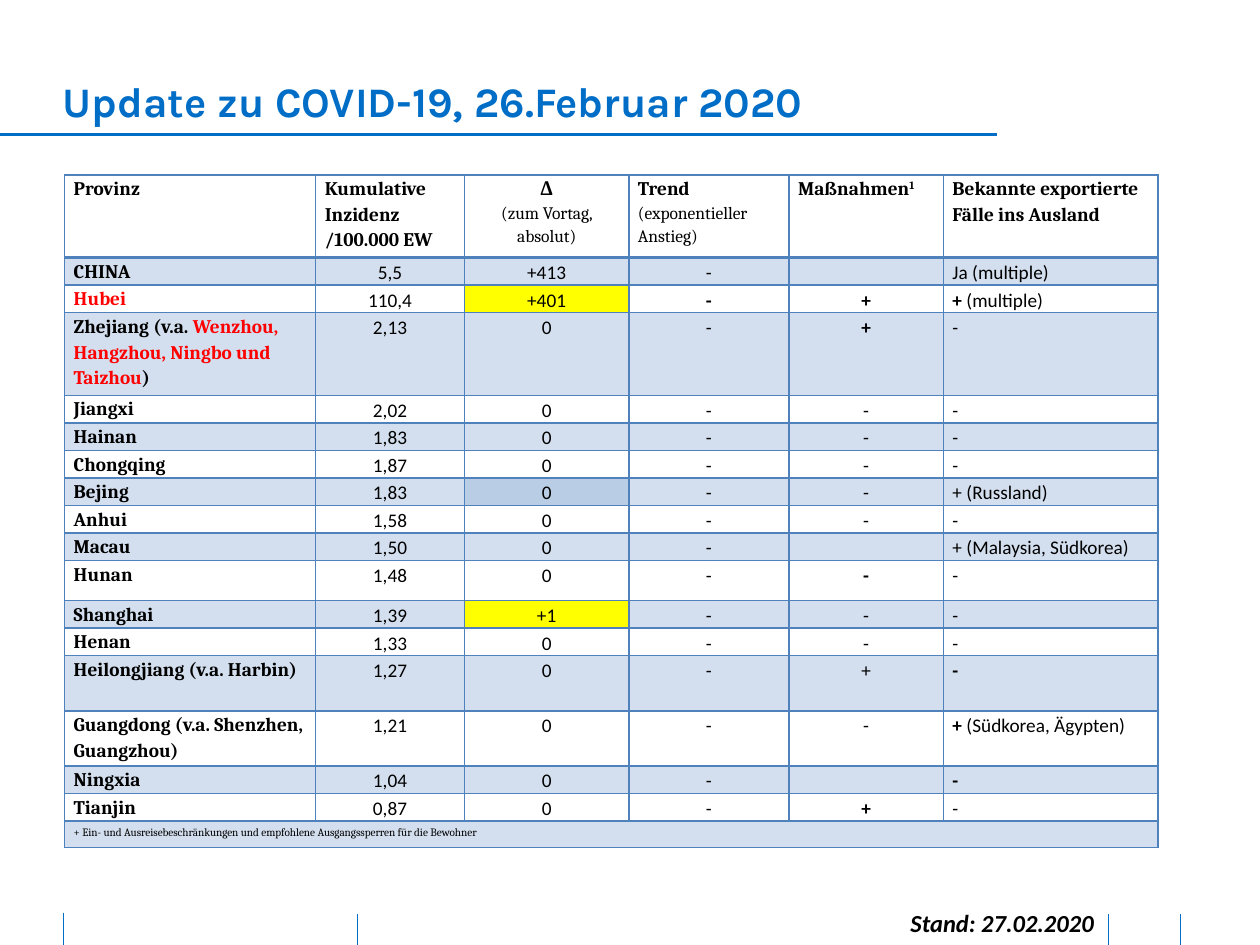
from lxml.etree import SubElement
from pptx import Presentation
from pptx.dml.color import RGBColor
from pptx.enum.shapes import MSO_CONNECTOR as Conn
from pptx.enum.text import PP_ALIGN as Align
from pptx.oxml.ns import qn
from pptx.util import Pt

BLUE = RGBColor(0x00, 0x6E, 0xC7)
BLACK = RGBColor(0x00, 0x00, 0x00)
RED = RGBColor(0xFF, 0x00, 0x00)
BAND = RGBColor(0xD3, 0xDF, 0xEE)
MID = RGBColor(0xB9, 0xCD, 0xE5)
YELLOW = RGBColor(0xFF, 0xFF, 0x00)
EDGE = RGBColor(0x4F, 0x81, 0xBD)

# Content: a cell is a string, or a list of paragraphs made of (text, format) runs
BOLD = dict(bold=True)
SMALL = dict(bold=False, size=10)
RAISED = dict(raised=True)
PLUS = [[("+", BOLD)]]
MINUS = [[("-", BOLD)]]

HEAD = [
    "Provinz",
    "Kumulative Inzidenz /100.000 EW",
    [[("Δ", {})], [("(zum Vortag, absolut)", SMALL)]],
    [[("Trend", {})], [("(exponentieller Anstieg)", SMALL)]],
    [[("Maßnahmen", {}), ("1", RAISED)]],
    "Bekannte exportierte Fälle ins Ausland",
]
ZHEJIANG = [[("Zhejiang (v.a. ", {}),
             ("Wenzhou, Hangzhou, Ningbo und Taizhou", dict(color=RED)),
             (")", {})]]
ROWS = [
    ["CHINA", "5,5", "+413", "-", "", "Ja (multiple)"],
    [[[("Hubei", dict(color=RED))]], "110,4", "+401", MINUS, PLUS,
     [[("+", BOLD), (" (multiple)", {})]]],
    [ZHEJIANG, "2,13", "0", "-", PLUS, "-"],
    ["Jiangxi", "2,02", "0", "-", "-", "-"],
    ["Hainan", "1,83", "0", "-", "-", "-"],
    ["Chongqing", "1,87", "0", "-", "-", "-"],
    ["Bejing", "1,83", "0", "-", "-", "+ (Russland)"],
    ["Anhui", "1,58", "0", "-", "-", "-"],
    ["Macau", "1,50", "0", "-", "", "+ (Malaysia, Südkorea)"],
    ["Hunan", "1,48", "0", "-", MINUS, "-"],
    ["Shanghai", "1,39", "+1", "-", "-", "-"],
    ["Henan", "1,33", "0", "-", "-", "-"],
    ["Heilongjiang (v.a. Harbin)", "1,27", "0", "-", "+", MINUS],
    ["Guangdong (v.a. Shenzhen, Guangzhou)", "1,21", "0", "-", "-",
     [[("+", BOLD), (" (Südkorea, Ägypten)", {})]]],
    ["Ningxia", "1,04", "0", "-", "", MINUS],
    ["Tianjin", "0,87", "0", "-", PLUS, "-"],
]
NOTE = [[("+ Ein- und Ausreisebeschränkungen und empfohlene "
          "Ausgangssperren für die Bewohner", RAISED)]]
GRID = [HEAD] + ROWS + [[NOTE] + [""] * 5]

WIDTHS = [143.5, 85, 94, 91.5, 88.25, 122.5]
LOW = 15.75
TALL = {0: 47.2, 3: 47.2, 10: 23, 13: 2 * LOW, 14: 2 * LOW, 17: 15.2}
MARKS = {(2, 2): YELLOW, (7, 2): MID, (11, 2): YELLOW}

# x1, y1, x2, y2, width
LINES = [
    (204.5, 522, 204.5, 540, 0.5),
    (36, 521.5, 36, 540, 0.5),
    (674.64, 522.5, 674.64, 540, 0.5),
    (633.6, 522.5, 633.6, 540, 0.5),
    (0, 77, 569.5, 77, 1.5),
]

deck = Presentation()
deck.slide_width, deck.slide_height = Pt(720), Pt(540)
slide = deck.slides.add_slide(deck.slide_layouts[6])


def write(frame, text, size=11, font="Calibri", color=BLACK, bold=False,
          italic=False, align=Align.LEFT, space=None):
    """Fill a text frame with a string or with paragraphs of runs."""
    frame.word_wrap = True
    paras = [[(text, {})]] if isinstance(text, str) else text
    for i, runs in enumerate(paras):
        para = frame.add_paragraph() if i else frame.paragraphs[0]
        para.alignment = align
        if space:
            para.line_spacing = space
        for part, own in runs:
            if not part:  # keep empty cells as low as the text rows
                para._p.get_or_add_endParaRPr().set("sz", str(size * 100))
                continue
            run = para.add_run()
            run.text = part
            face = run.font
            face.name = font
            face.size = Pt(own.get("size", size))
            face.bold = own.get("bold", bold)
            face.italic = italic
            face.color.rgb = own.get("color", color)
            if own.get("raised"):
                face._element.set("baseline", "30000")


def border(cell, **widths):
    props = cell._tc.get_or_add_tcPr()
    for side in "LRTB":
        line = SubElement(props, qn("a:ln" + side),
                          w=str(Pt(widths.get(side, 1))))
        fill = SubElement(line, qn("a:solidFill"))
        SubElement(fill, qn("a:srgbClr"), val=str(EDGE))


# Rules of the page
for x1, y1, x2, y2, width in LINES:
    rule = slide.shapes.add_connector(Conn.STRAIGHT, Pt(x1), Pt(y1),
                                      Pt(x2), Pt(y2))
    rule.line.color.rgb = BLUE
    rule.line.width = Pt(width)
    SubElement(rule._element.spPr, qn("a:effectLst"))

# Title and date
title = slide.shapes.add_textbox(Pt(36), Pt(43.2), Pt(637), Pt(28.8)).text_frame
title.margin_left = title.margin_right = 0
title.margin_top = title.margin_bottom = 0
write(title, "Update zu COVID-19, 26.Februar 2020", size=24, font="Karla",
      color=BLUE, bold=True)
date = slide.shapes.add_textbox(Pt(479), Pt(515.5), Pt(153.3), Pt(24.5)).text_frame
write(date, "Stand: 27.02.2020", size=14, bold=True, italic=True,
      align=Align.RIGHT)

# Table
heights = [TALL.get(r, LOW) for r in range(len(GRID))]
table = slide.shapes.add_table(len(GRID), len(WIDTHS), Pt(36.9), Pt(100),
                               Pt(sum(WIDTHS)), Pt(sum(heights))).table
table.first_row = table.horz_banding = False
for col, width in zip(table.columns, WIDTHS):
    col.width = Pt(width)
for row, height in zip(table.rows, heights):
    row.height = Pt(height)

last = len(GRID) - 1
for r, cells in enumerate(GRID):
    for c, text in enumerate(cells):
        cell = table.cell(r, c)
        cell.margin_left = cell.margin_right = Pt(5.2)
        cell.margin_top = cell.margin_bottom = 0
        serif = r == 0 or c == 0
        center = c == 2 if r == 0 else c in (1, 2, 3, 4)
        write(cell.text_frame, text, space=1.15,
              font="Cambria" if serif else "Calibri",
              bold=serif and r != last,
              align=Align.CENTER if center else Align.LEFT)
        border(cell, T=2.25 if r == 1 else 1, B=2.25 if r == 0 else 1)
        if r % 2 or (r, c) in MARKS:
            cell.fill.solid()
            cell.fill.fore_color.rgb = MARKS.get((r, c), BAND)
        else:
            cell.fill.background()
table.cell(last, 0).merge(table.cell(last, len(WIDTHS) - 1))

deck.save("out.pptx")
